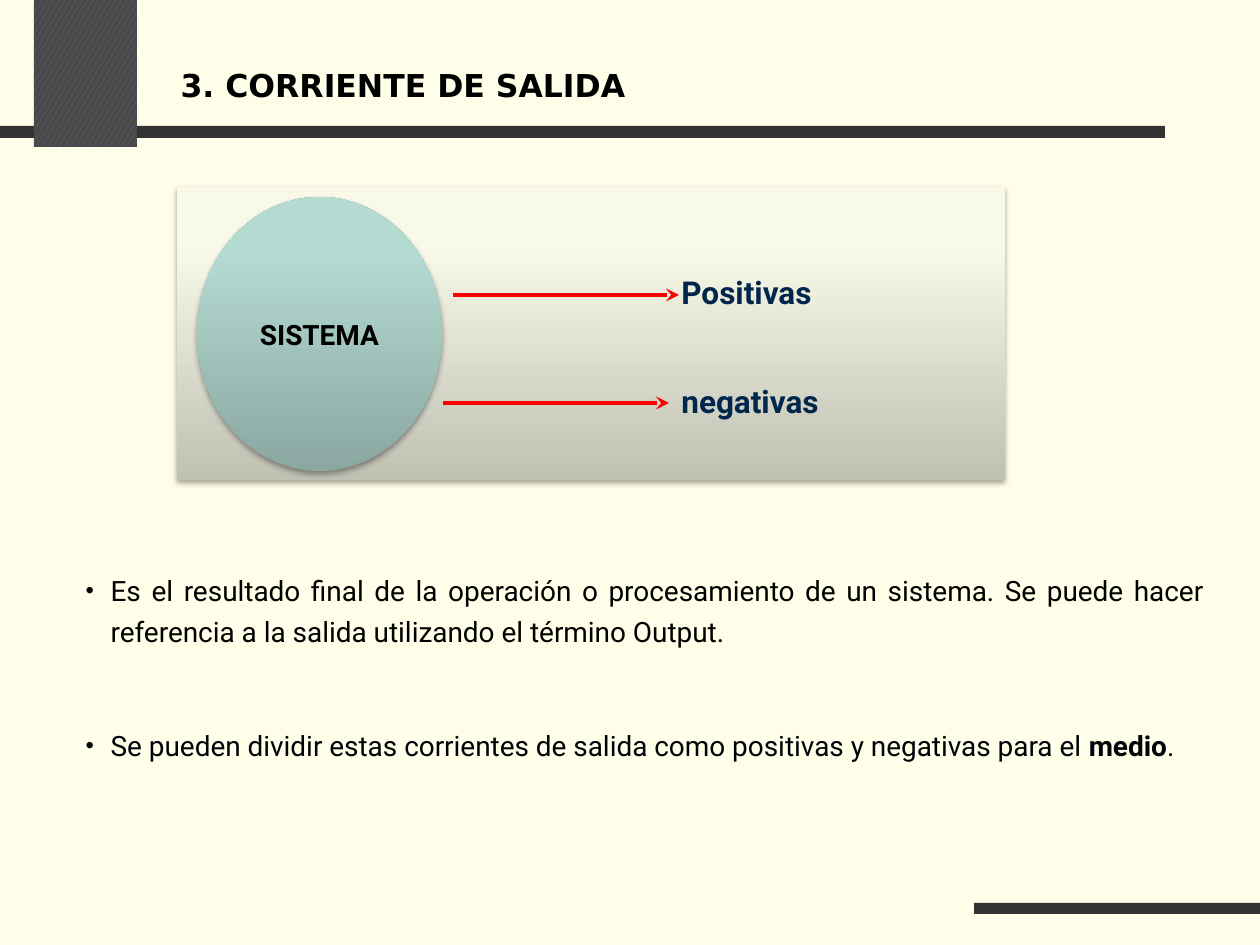
from lxml import etree
from pptx import Presentation
from pptx import util as u
from pptx.dml.color import RGBColor
from pptx.enum import dml, shapes, text
from pptx.oxml.ns import qn

PX = 914400 / 126
COLORS = {
    "background": "FFFFE9", "bar": "333333", "block": "4D4D4D", "hatch": "262D4C",
    "panel_low": "C0C0B3", "panel_high": "F9F9E9",
    "circle_low": "8AA8A1", "circle_high": "B4DAD1",
    "arrow": "FF0000", "label": "00264C", "ink": "000000", "body": "000408",
}


def color(name):
    """Look up a named colour."""
    return RGBColor.from_string(COLORS[name])


def px(*lengths):
    """Turn pixel lengths into EMU."""
    return [u.Emu(round(length * PX)) for length in lengths]


def place(shape, left, top, width, height):
    """Move and size a shape in pixels."""
    shape.left, shape.top, shape.width, shape.height = px(left, top, width, height)


def style(paragraph, size, ink, bold=False, name="Roboto"):
    """Format the font of a whole paragraph."""
    font = paragraph.font
    font.size, font.bold, font.name = u.Pt(size), bold, name
    font.color.rgb = color(ink)


def add_block(parent, kind, box, fill):
    """Add a preset shape with a plain fill and no outline or shadow."""
    shape = parent.add_shape(kind, *px(*box))
    shape.fill.solid()
    shape.fill.fore_color.rgb = color(fill)
    shape.line.fill.background()
    shape.shadow.inherit = False
    return shape


def add_raised(parent, kind, box, name):
    """Add a shape with a vertical gradient and a soft shadow below."""
    shape = add_block(parent, kind, box, f"{name}_low")
    shape.fill.gradient()
    shape.fill.gradient_angle = 90
    for stop, position, tone in zip(shape.fill.gradient_stops, (0, 0.8), ("low", "high")):
        stop.position = position
        stop.color.rgb = color(f"{name}_{tone}")
    effects = shape._element.spPr.find(qn("a:effectLst"))
    shadow = etree.SubElement(effects, qn("a:outerShdw"), blurRad=str(u.Pt(3.1)),
                              dist=str(u.Pt(1.8)), dir="5400000", rotWithShape="0")
    shade = etree.SubElement(shadow, qn("a:srgbClr"), val=COLORS["ink"])
    etree.SubElement(shade, qn("a:alpha"), val="35000")
    return shape


def add_arrow(parent, left, top, width):
    """Add a horizontal red arrow pointing right."""
    arrow = parent.add_connector(shapes.MSO_CONNECTOR.STRAIGHT,
                                 *px(left, top, left + width, top))
    arrow.line.color.rgb = color("arrow")
    arrow.line.width = u.Pt(2.5)
    properties = arrow._element.spPr
    etree.SubElement(properties.find(qn("a:ln")), qn("a:tailEnd"), type="stealth")
    etree.SubElement(properties, qn("a:effectLst"))


def add_frame(slide):
    """Add the bars and the hatched block of the slide design."""
    rectangle = shapes.MSO_SHAPE.RECTANGLE
    add_block(slide.shapes, rectangle, (0, 126, 1165, 12), "bar")
    block = add_block(slide.shapes, rectangle, (34, 0, 103, 147), "block")
    block.fill.patterned()
    block.fill.pattern = dml.MSO_PATTERN.LARGE_CONFETTI
    block.fill.fore_color.rgb = color("hatch")
    block.fill.back_color.rgb = color("block")
    add_block(slide.shapes, rectangle, (974, 903, 286, 11), "bar")


def fill_title(title, words):
    """Write the slide title."""
    place(title, 168, 32, 1017, 105)
    title.text_frame.vertical_anchor = text.MSO_ANCHOR.MIDDLE
    paragraph = title.text_frame.paragraphs[0]
    paragraph.text = words
    paragraph.alignment = text.PP_ALIGN.LEFT
    style(paragraph, 18, "ink", True, "DejaVu Sans")


def add_bullet(paragraph, runs, ink, spacing, before):
    """Write one justified bullet from (words, bold) runs."""
    properties = paragraph._p.get_or_add_pPr()
    indent = px(25)[0]
    properties.set("marL", str(indent))
    properties.set("indent", str(-indent))
    etree.SubElement(properties, qn("a:buSzPct"), val="85000")
    etree.SubElement(properties, qn("a:buChar"), char="•")
    paragraph.alignment = text.PP_ALIGN.JUSTIFY
    paragraph.line_spacing = spacing
    paragraph.space_before = u.Pt(before)
    style(paragraph, 16, ink)
    for words, bold in runs:
        run = paragraph.add_run()
        run.text = words
        if bold:
            run.font.bold = True


def fill_body(body):
    """Write the two bullets of the body."""
    place(body, 73, 561, 1144, 363)
    frame = body.text_frame
    frame.auto_size = text.MSO_AUTO_SIZE.NONE
    frame.vertical_anchor = text.MSO_ANCHOR.TOP
    add_bullet(frame.paragraphs[0], [
        ("Es el resultado final de la operación o procesamiento de un sistema. "
         "Se puede hacer referencia a la salida utilizando el término Output.", False),
    ], "ink", 1.2, 0)
    add_bullet(frame.add_paragraph(), [
        ("Se pueden dividir estas corrientes de salida como positivas y negativas "
         "para el ", False),
        ("medio", True),
        (".", False),
    ], "body", 1.5, 36.5)


def add_labels(parent, box, labels, gap):
    """Add a text box with one spaced label per paragraph."""
    frame = parent.add_textbox(*px(*box)).text_frame
    frame.word_wrap = True
    for index, label in enumerate(labels):
        paragraph = frame.add_paragraph() if index else frame.paragraphs[0]
        paragraph.text = label
        paragraph.space_before = u.Pt(gap if index else 0)
        style(paragraph, 18, "label", True)


def add_diagram(slide):
    """Add the system with its two output streams."""
    parent = slide.shapes.add_group_shape().shapes
    add_raised(parent, shapes.MSO_SHAPE.RECTANGLE, (177, 187, 828, 293), "panel")
    circle = add_raised(parent, shapes.MSO_SHAPE.OVAL, (197, 197, 245, 274), "circle")
    circle.text_frame.word_wrap = False
    circle.text_frame.vertical_anchor = text.MSO_ANCHOR.MIDDLE
    paragraph = circle.text_frame.paragraphs[0]
    paragraph.text = "SISTEMA"
    paragraph.alignment = text.PP_ALIGN.CENTER
    style(paragraph, 16, "ink", True)
    for left, top in ((453, 295), (443, 403)):
        add_arrow(parent, left, top, 226)
    add_labels(parent, (669, 267, 286, 165), ("Positivas", "negativas"), 40.5)


def main():
    """Build and save the slide."""
    presentation = Presentation()
    presentation.slide_width, presentation.slide_height = px(1260, 945)
    slide = presentation.slides.add_slide(presentation.slide_layouts[1])
    slide.background.fill.solid()
    slide.background.fill.fore_color.rgb = color("background")
    add_frame(slide)
    fill_title(slide.shapes.title, "3. CORRIENTE DE SALIDA")
    fill_body(slide.placeholders[1])
    add_diagram(slide)
    presentation.save("out.pptx")


if __name__ == "__main__":
    main()
